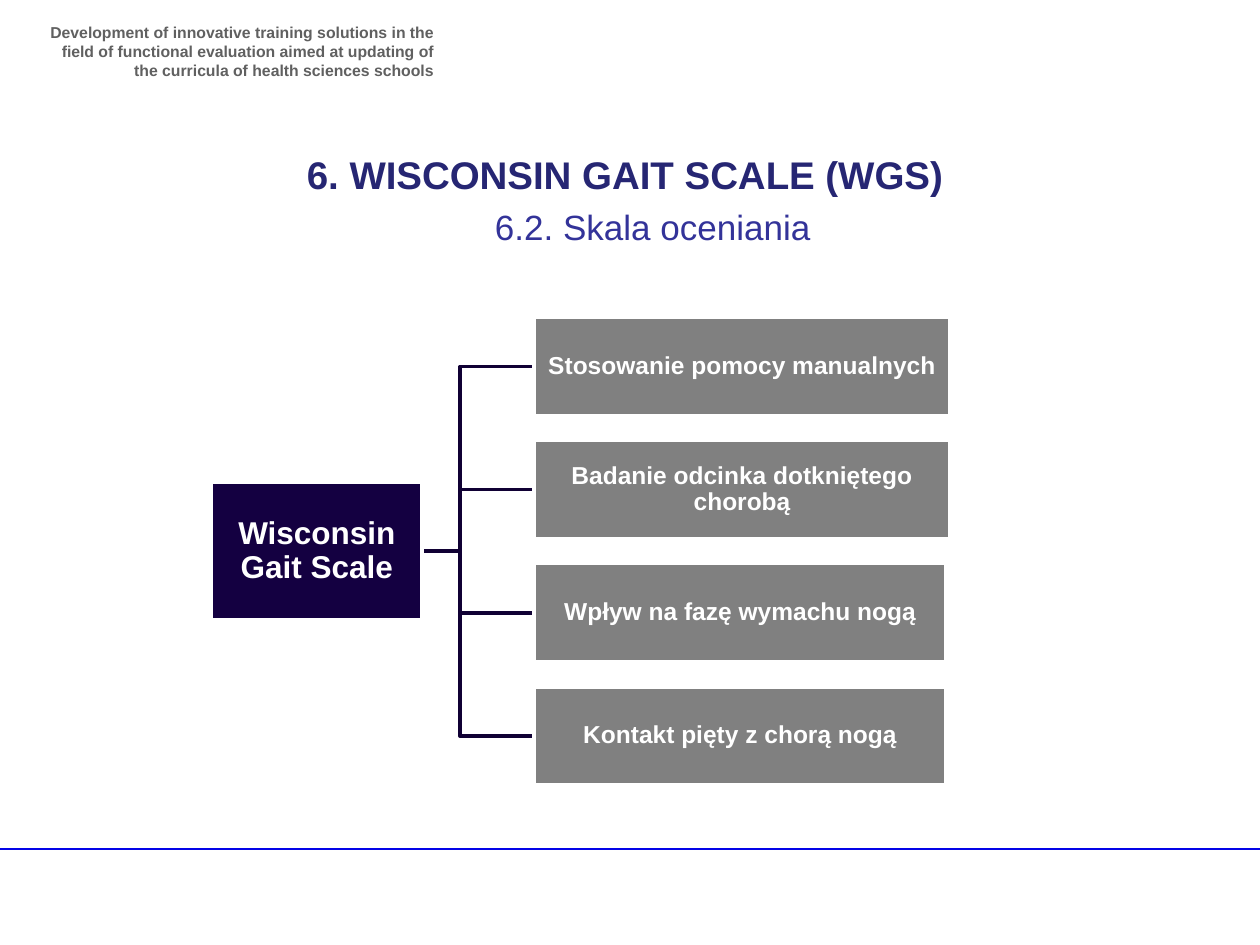
from dataclasses import dataclass

import pptx
import pptx.dml.color
import pptx.enum.shapes
import pptx.enum.text
import pptx.oxml
import pptx.oxml.ns
import pptx.util

Inches = pptx.util.Inches
Align = pptx.enum.text.PP_ALIGN
Anchor = pptx.enum.text.MSO_ANCHOR


@dataclass(frozen=True)
class Theme:
    font: str = "Arial"
    header: str = "606060"
    title: str = "262673"
    subtitle: str = "333399"
    root: str = "140041"
    branch: str = "808080"
    connector: str = "100034"
    rule: str = "0404E6"
    white: str = "FFFFFF"
    header_size: float = 9
    title_size: float = 22
    subtitle_size: float = 20
    root_size: float = 18
    branch_size: float = 14


@dataclass(frozen=True)
class Node:
    text: str
    left: float
    top: float
    width: float
    height: float
    fill: str
    size: float

    @property
    def middle(self) -> float:
        return self.top + self.height / 2


THEME = Theme()


def rgb(value: str):
    return pptx.dml.color.RGBColor.from_string(value)


def write_text(shape, text: str, *, size: float, color: str, bold: bool = False,
               align=Align.LEFT, anchor=Anchor.TOP, inset: float | None = None,
               spacing: float | None = None) -> None:
    frame = shape.text_frame
    frame.word_wrap = True
    frame.vertical_anchor = anchor
    if inset is not None:
        frame.margin_left = frame.margin_right = Inches(inset)
        frame.margin_top = frame.margin_bottom = Inches(inset)
    para = frame.paragraphs[0]
    para.alignment = align
    if spacing:
        para.line_spacing = spacing
    span = para.add_run()
    span.text = text
    span.font.name = THEME.font
    span.font.size = pptx.util.Pt(size)
    span.font.bold = bold
    span.font.color.rgb = rgb(color)


def add_text(page, left: float, top: float, width: float, height: float,
             text: str, **style) -> None:
    box = page.shapes.add_textbox(Inches(left), Inches(top), Inches(width), Inches(height))
    write_text(box, text, **style)


def set_line(shape, color: str, width: float) -> None:
    shape.line.color.rgb = rgb(color)
    shape.line.width = pptx.util.Pt(width)


def add_node(page, node: Node) -> None:
    box = page.shapes.add_shape(
        pptx.enum.shapes.MSO_SHAPE.RECTANGLE,
        Inches(node.left), Inches(node.top), Inches(node.width), Inches(node.height))
    box.shadow.inherit = False
    box.fill.solid()
    box.fill.fore_color.rgb = rgb(node.fill)
    set_line(box, THEME.white, 2)
    write_text(box, node.text, size=node.size, color=THEME.white, bold=True,
               align=Align.CENTER, anchor=Anchor.MIDDLE, inset=0.01, spacing=0.9)


def add_elbow(page, root: Node, branch: Node) -> None:
    # The path starts beneath the root box and turns at the shared trunk
    start, trunk = 3.06, 3.65
    builder = page.shapes.build_freeform(Inches(start), Inches(root.middle))
    points = [(trunk, root.middle), (trunk, branch.middle), (branch.left, branch.middle)]
    builder.add_line_segments([(Inches(x), Inches(y)) for x, y in points], close=False)
    elbow = builder.convert_to_shape()
    elbow.shadow.inherit = False
    elbow.fill.background()
    set_line(elbow, THEME.connector, 2)


def add_rule(page, left: float, right: float, y: float) -> None:
    rule = page.shapes.add_connector(pptx.enum.shapes.MSO_CONNECTOR.STRAIGHT,
                                     Inches(left), Inches(y), Inches(right), Inches(y))
    set_line(rule, THEME.rule, 1)
    rule._element.spPr.append(pptx.oxml.parse_xml(
        f"<a:effectLst {pptx.oxml.ns.nsdecls('a')}/>"))


def main() -> None:
    deck = pptx.Presentation()
    deck.slide_width, deck.slide_height = Inches(10), Inches(7.5)
    page = deck.slides.add_slide(deck.slide_layouts[6])

    # Footer rule, header and title
    add_rule(page, -0.05, 10, 6.74)
    add_text(page, 0.28, 0.13, 3.26, 0.47,
             "Development of innovative training solutions in the ﬁeld of functional "
             "evaluation aimed at updating of the curricula of health sciences schools",
             size=THEME.header_size, color=THEME.header, bold=True, align=Align.RIGHT)
    add_text(page, 0.67, 1.15, 8.58, 0.47, "6. WISCONSIN GAIT SCALE (WGS)",
             size=THEME.title_size, color=THEME.title, bold=True, align=Align.CENTER)

    # Scale tree: elbows lie behind the boxes
    root = Node("Wisconsin Gait Scale", 1.68, 3.83, 1.67, 1.09, THEME.root, THEME.root_size)
    labels = [
        ("Stosowanie pomocy manualnych", 3.3),
        ("Badanie odcinka dotkniętego chorobą", 3.3),
        ("Wpływ na fazę wymachu nogą", 3.27),
        ("Kontakt pięty z chorą nogą", 3.27),
    ]
    first_top, pitch = 2.52, 0.977
    branches = [Node(text, 4.24, first_top + row * pitch, width, 0.78,
                     THEME.branch, THEME.branch_size)
                for row, (text, width) in enumerate(labels)]
    for branch in reversed(branches):
        add_elbow(page, root, branch)
    for node in [root, *branches]:
        add_node(page, node)

    # Subtitle
    add_text(page, 3.83, 1.58, 3.46, 0.77, "6.2. Skala oceniania",
             size=THEME.subtitle_size, color=THEME.subtitle)

    deck.save("out.pptx")


if __name__ == "__main__":
    main()
